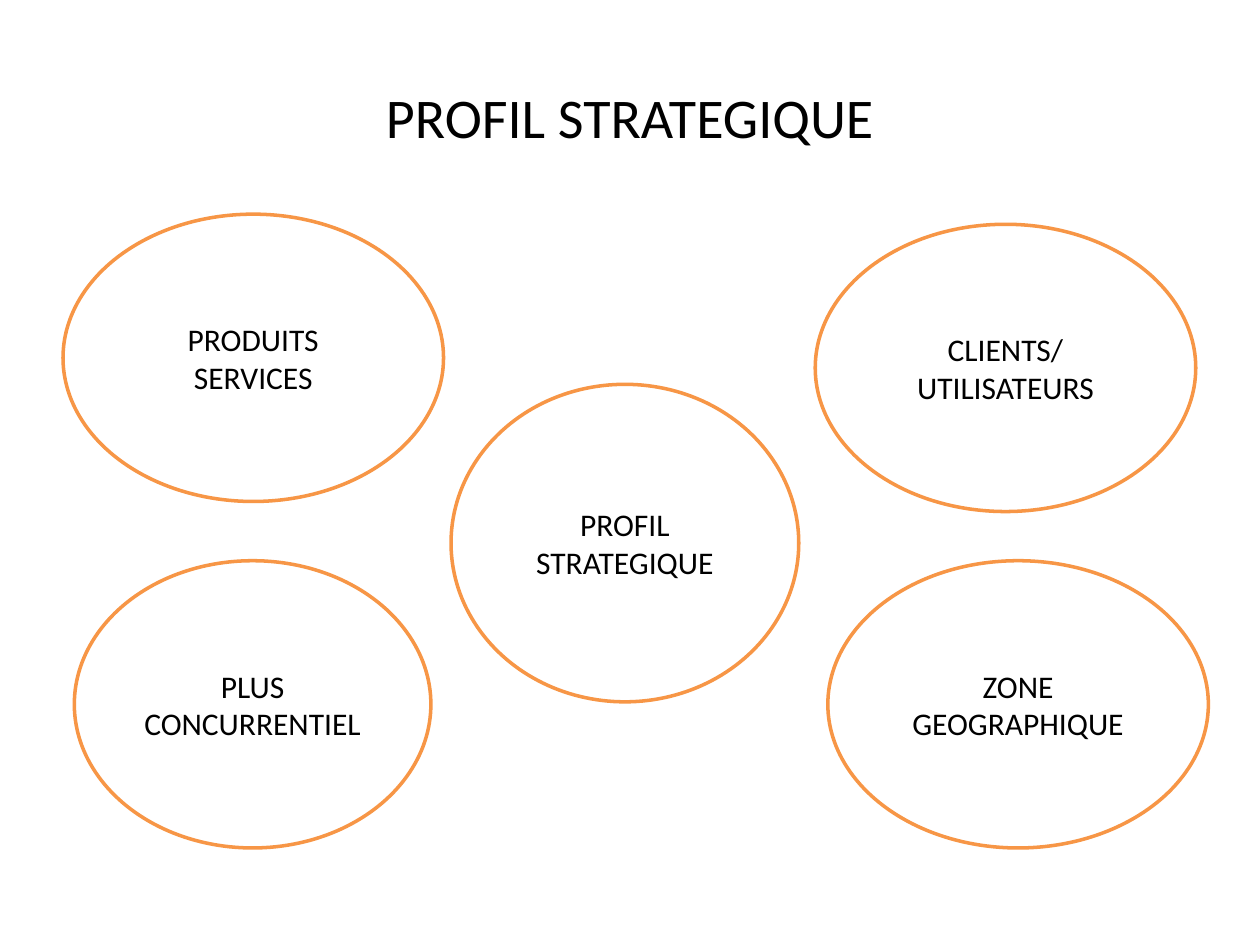
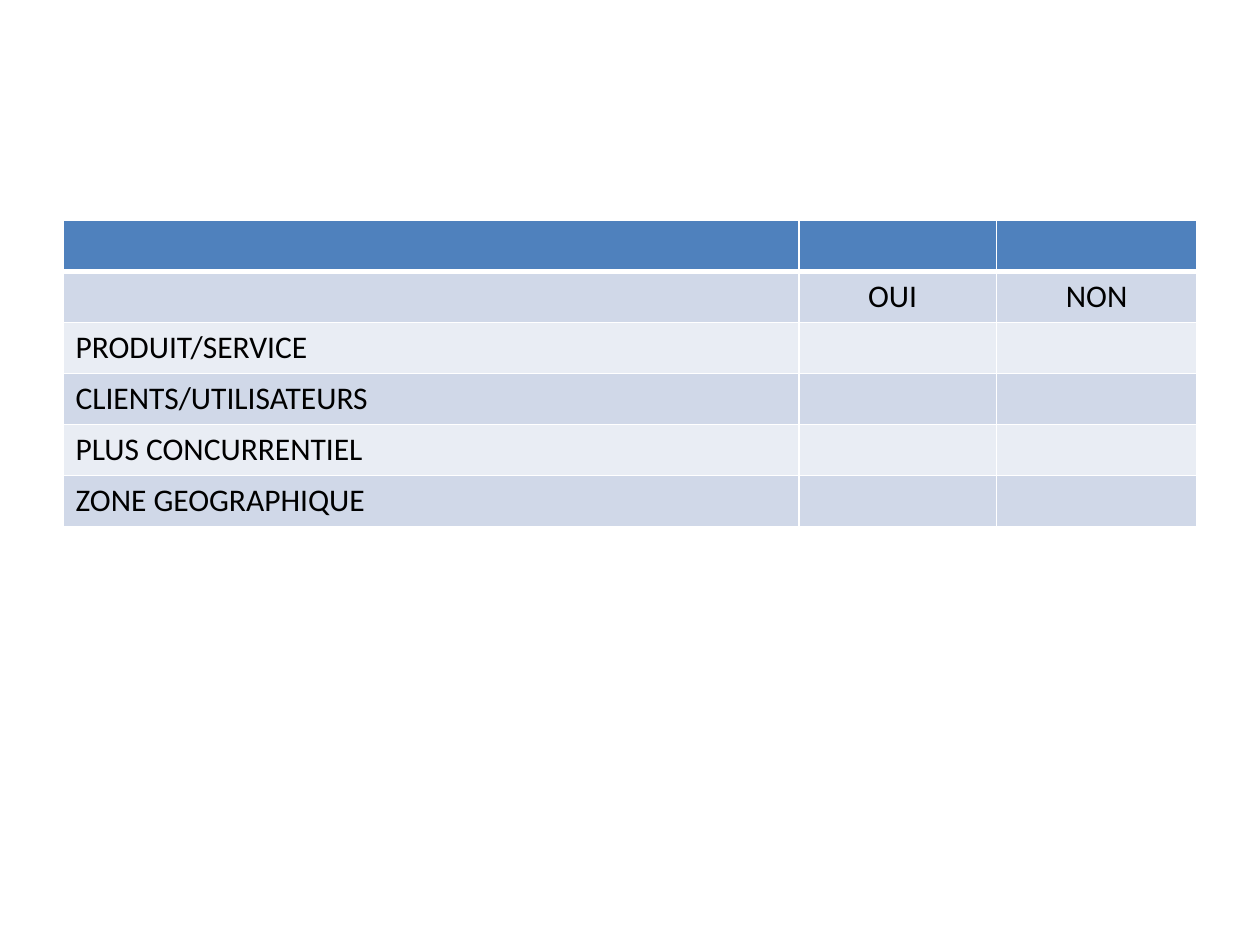
from typing import Any, NamedTuple

from lxml.etree import SubElement
from pptx import Presentation
from pptx.dml.color import RGBColor
from pptx.enum.shapes import MSO_SHAPE as Shape
from pptx.enum.text import MSO_ANCHOR as Anchor, PP_ALIGN as Align
from pptx.oxml.ns import qn
from pptx.util import Emu, Pt

# Shared look: 100 px to the inch
EMU_PER_PX = 9144
FONT = "Calibri"
BLACK, WHITE, ORANGE, BLUE = "000000", "FFFFFF", "F79646", "4F81BD"
BANDS = ("D0D8E8", "E9EDF4")
TITLE_SIZE, BODY_SIZE = 32, 18


class Box(NamedTuple):
    left: int
    top: int
    width: int
    height: int


class Bubble(NamedTuple):
    text: str
    box: Box


BUBBLES = (
    Bubble("PLUS CONCURRENTIEL", Box(59, 445, 283, 228)),
    Bubble("ZONE GEOGRAPHIQUE", Box(657, 445, 302, 228)),
    Bubble("PRODUITS SERVICES", Box(50, 170, 302, 228)),
    Bubble("PROFIL STRATEGIQUE", Box(358, 305, 276, 252)),
    Bubble("CLIENTS/\nUTILISATEURS", Box(647, 178, 302, 228)),
)

TABLE_BOX = Box(50, 175, 900, 243)
COLUMN_WIDTHS = (584, 157, 159)
ANSWER_INDENT = 55
ROWS = (
    ("", "", ""),
    ("", "OUI", "NON"),
    ("PRODUIT/SERVICE", "", ""),
    ("CLIENTS/UTILISATEURS", "", ""),
    ("PLUS CONCURRENTIEL", "", ""),
    ("ZONE GEOGRAPHIQUE", "", ""),
)


def px(length: int) -> Emu:
    return Emu(length * EMU_PER_PX)


def place(box: Box) -> list[Emu]:
    return [px(length) for length in box]


def color(value: str) -> RGBColor:
    return RGBColor.from_string(value)


def apply(target: Any, values: dict[str, Any]) -> None:
    for name, value in values.items():
        setattr(target, name, value)


def fill_with(target: Any, value: str) -> None:
    target.fill.solid()
    target.fill.fore_color.rgb = color(value)


def write(frame: Any, text: str, size: int, align: Align) -> None:
    frame.text = text
    for paragraph in frame.paragraphs:
        paragraph.alignment = align
        apply(paragraph.font, {"name": FONT, "size": Pt(size)})
        paragraph.font.color.rgb = color(BLACK)


def add_title(slide: Any, text: str) -> None:
    frame = slide.shapes.add_textbox(*place(Box(50, 30, 900, 125))).text_frame
    apply(frame, {"word_wrap": True, "vertical_anchor": Anchor.MIDDLE})
    write(frame, text, TITLE_SIZE, Align.CENTER)


def add_bubble(slide: Any, bubble: Bubble) -> None:
    shape = slide.shapes.add_shape(Shape.OVAL, *place(bubble.box))
    shape.shadow.inherit = False
    fill_with(shape, WHITE)
    shape.line.color.rgb = color(ORANGE)
    shape.line.width = Pt(2)
    apply(shape.text_frame, {"word_wrap": True, "vertical_anchor": Anchor.MIDDLE})
    write(shape.text_frame, bubble.text, BODY_SIZE, Align.CENTER)


def add_borders(cell: Any, widths: dict[str, int]) -> None:
    """Draw white cell borders; they must come before the cell's fill."""
    properties = cell._tc.get_or_add_tcPr()
    for position, (side, width) in enumerate(widths.items()):
        line = SubElement(properties, qn(f"a:ln{side}"), w=str(Pt(width)))
        SubElement(SubElement(line, qn("a:solidFill")), qn("a:srgbClr"), val=WHITE)
        properties.insert(position, line)


def add_answer_table(slide: Any) -> None:
    table = slide.shapes.add_table(
        len(ROWS), len(COLUMN_WIDTHS), *place(TABLE_BOX)
    ).table
    apply(table, {"first_row": False, "horz_banding": False})
    for column, width in zip(table.columns, COLUMN_WIDTHS):
        column.width = px(width)
    for row_index, row in enumerate(ROWS):
        fill = BANDS[(row_index - 1) % 2] if row_index else BLUE
        top = 3 if row_index == 1 else 1
        bottom = 3 if row_index == 0 else 1
        for column_index, text in enumerate(row):
            cell = table.cell(row_index, column_index)
            fill_with(cell, fill)
            add_borders(cell, {"L": 1, "R": 1, "T": top, "B": bottom})
            write(cell.text_frame, text, BODY_SIZE, Align.LEFT)
            if text and column_index:
                cell.margin_left = px(ANSWER_INDENT)


def main() -> None:
    presentation = Presentation()
    apply(presentation, {"slide_width": px(1000), "slide_height": px(750)})
    blank = presentation.slide_layouts[6]

    # Slide 1: the profile and its four components
    slide = presentation.slides.add_slide(blank)
    add_title(slide, "PROFIL STRATEGIQUE")
    for bubble in BUBBLES:
        add_bubble(slide, bubble)

    # Slide 2: yes/no grid
    add_answer_table(presentation.slides.add_slide(blank))

    presentation.save("out.pptx")


if __name__ == "__main__":
    main()
